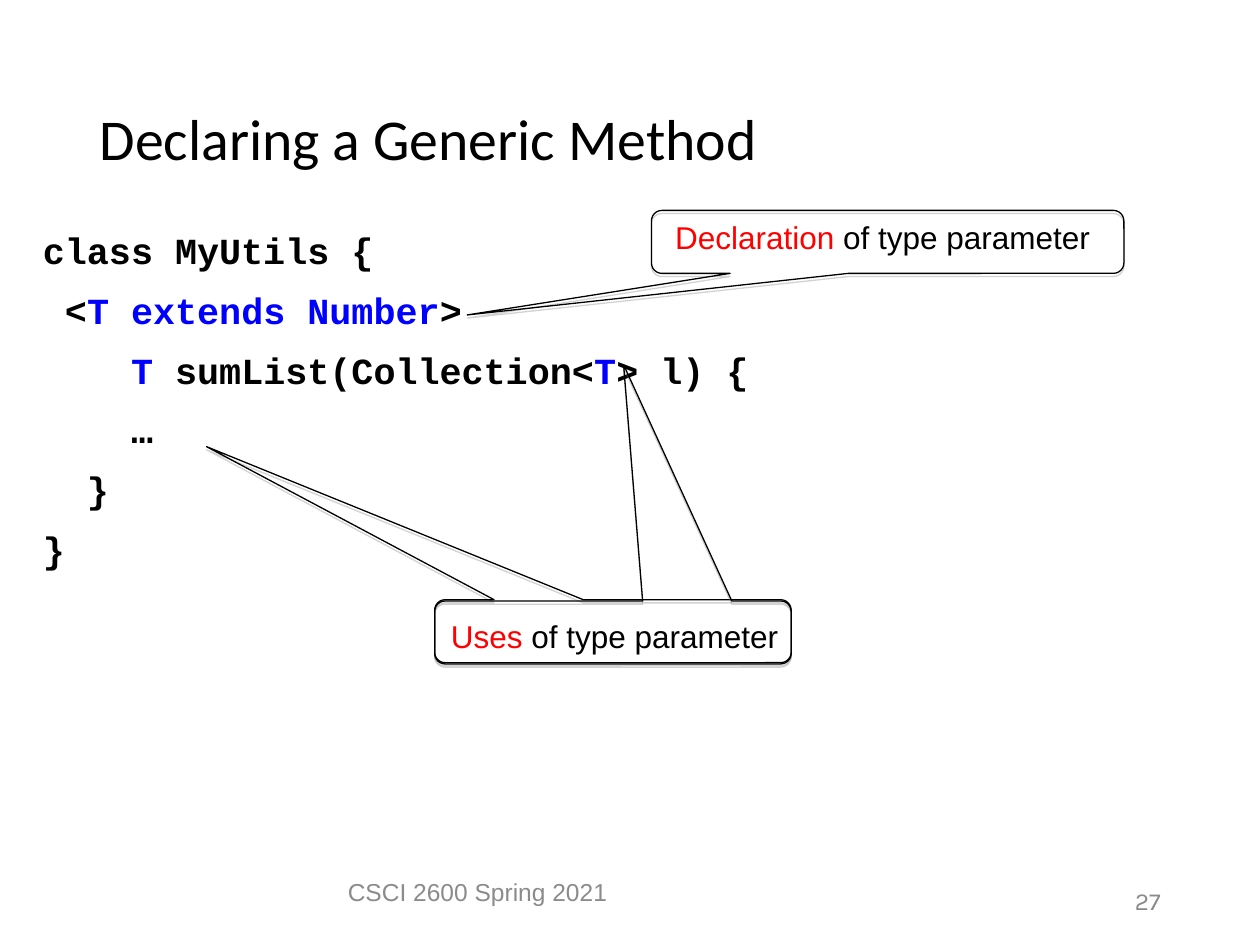
from lxml.etree import SubElement
from pptx import Presentation
from pptx.dml.color import RGBColor
from pptx.enum.shapes import MSO_SHAPE
from pptx.enum.text import MSO_ANCHOR, MSO_AUTO_SIZE, PP_ALIGN
from pptx.oxml.ns import qn
from pptx.util import Inches, Pt

BLACK = RGBColor(0x00, 0x00, 0x00)
BLUE = RGBColor(0x00, 0x00, 0xFF)
RED = RGBColor(0xFF, 0x00, 0x00)
GRAY = RGBColor(0x8B, 0x8B, 0x8B)

CELL = Inches(0.1)  # the slide is a grid of 100 columns by 75 rows
CODE_SIZE = 21
CHARACTER = Pt(CODE_SIZE * 0.6)  # width of one Courier New character


class SlideBuilder:
    def __init__(self, deck):
        self.page = deck.slides.add_slide(deck.slide_layouts[1])

    def place(self, box, left, top, width, height):
        box.left, box.top = int(left * CELL), int(top * CELL)
        box.width, box.height = int(width * CELL), int(height * CELL)

    def add_spans(self, para, spans, size, font, bold=False):
        for text, color in spans:
            span = para.add_run()
            span.text = text
            span.font.size = Pt(size)
            span.font.name = font
            span.font.bold = bold
            span.font.color.rgb = color

    def title(self, area, text):
        box = self.page.shapes.title
        self.place(box, *area)
        frame = box.text_frame
        frame.auto_size = MSO_AUTO_SIZE.NONE
        frame.vertical_anchor = MSO_ANCHOR.MIDDLE
        para = frame.paragraphs[0]
        para.alignment = PP_ALIGN.LEFT
        para.line_spacing = 0.9
        self.add_spans(para, [(text, BLACK)], 33, "Calibri")

    def code(self, area, lines):
        box = self.page.placeholders[1]
        self.place(box, *area)
        frame = box.text_frame
        frame.auto_size = MSO_AUTO_SIZE.NONE
        for number, (indent, spans) in enumerate(lines):
            para = frame.add_paragraph() if number else frame.paragraphs[0]
            para.space_before = Pt(8.9 if number else 4.8)
            properties = para._p.get_or_add_pPr()
            properties.set("marL", str(indent * CHARACTER))
            properties.set("indent", "0")
            SubElement(properties, qn("a:buNone"))
            self.add_spans(para, spans, CODE_SIZE, "Courier New", True)

    def label(self, area, spans, size=18, font="Arial", align=PP_ALIGN.LEFT,
              anchor=MSO_ANCHOR.TOP, wrap=False):
        box = self.page.shapes.add_textbox(0, 0, 0, 0)
        self.place(box, *area)
        frame = box.text_frame
        frame.word_wrap = wrap
        frame.vertical_anchor = anchor
        para = frame.paragraphs[0]
        para.alignment = align
        self.add_spans(para, spans, size, font)

    def footer(self, area, text, font, align):
        self.label(area, [(text, GRAY)], 14, font, align,
                   MSO_ANCHOR.MIDDLE, True)

    def callout(self, area, pointer):
        shape = self.page.shapes.add_shape(
            MSO_SHAPE.ROUNDED_RECTANGULAR_CALLOUT, 0, 0, 0, 0)
        self.place(shape, *area)
        for index, value in enumerate((*pointer, 0.167)):
            shape.adjustments[index] = value
        shape.fill.background()
        shape.line.color.rgb = BLACK
        shape.line.width = Pt(0.75)
        # Soft gray shadow straight below the outline
        shape.shadow.inherit = False
        effects = shape._element.spPr.find(qn("a:effectLst"))
        shadow = SubElement(effects, qn("a:outerShdw"), blurRad="0",
                            dist=str(Pt(1.8)), dir="5400000",
                            rotWithShape="0")
        color = SubElement(shadow, qn("a:srgbClr"), val="808080")
        SubElement(color, qn("a:alpha"), val="35000")


def main():
    deck = Presentation()
    deck.slide_width, deck.slide_height = 100 * CELL, 75 * CELL
    slide = SlideBuilder(deck)

    # Title and code
    slide.title((6.9, 4, 86.2, 14.5), "Declaring a Generic Method")
    slide.code((2.4, 17.6, 97.5, 49.6), [
        (0, [("class MyUtils {", BLACK)]),
        (1, [("<", BLACK), ("T extends Number", BLUE), (">", BLACK)]),
        (4, [("T ", BLUE), ("sumList(Collection<", BLACK), ("T", BLUE),
             ("> l) {", BLACK)]),
        (4, [("…", BLACK)]),
        (2, [("}", BLACK)]),
        (0, [("}", BLACK)]),
    ])

    # Footer and page number
    slide.footer((2.5, 68.3, 70.8, 5), "CSCI 2600 Spring 2021", "Arial",
                 PP_ALIGN.CENTER)
    slide.footer((70.6, 69.5, 22.5, 4), "27", "Karla", PP_ALIGN.RIGHT)

    # Callout on the declaration
    slide.callout((51.7, 16.7, 37.5, 5), (-0.89, 1.16))
    slide.label((52.6, 16.8, 35.5, 4),
                [("Declaration", RED), (" of type parameter", BLACK)])

    # Two callouts sharing one label on the uses
    slide.callout((34.5, 47.6, 28.3, 5), (-1.14, -2.93))
    slide.label((34.8, 48.5, 28.6, 4),
                [("Uses", RED), (" of type parameter", BLACK)])
    slide.callout((34.5, 47.7, 28.3, 5), (0.03, -4.25))

    deck.save("out.pptx")


if __name__ == "__main__":
    main()
